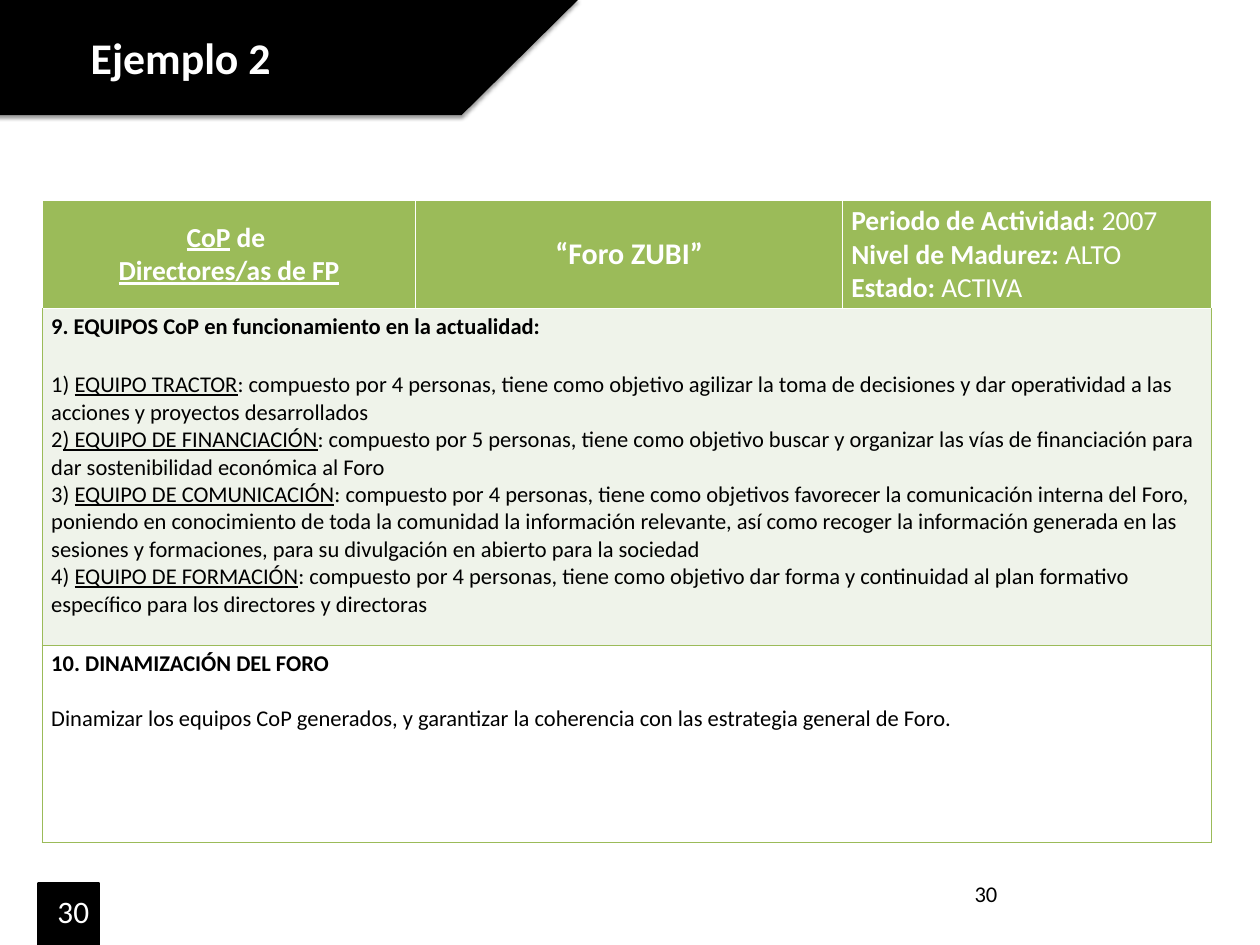
from lxml import etree
from pptx import Presentation
from pptx import util as u
from pptx.dml.color import RGBColor
from pptx.enum import shapes, text
from pptx.oxml.ns import qn

BLACK = RGBColor(0x00, 0x00, 0x00)
WHITE = RGBColor(0xFF, 0xFF, 0xFF)
GREEN = RGBColor(0x9B, 0xBB, 0x59)
PALE = RGBColor(0xEF, 0xF3, 0xEA)
FONT = "Calibri"
PLAIN, BOLD, UNDER = "", "b", "u"


class SlideBuilder:
    def __init__(self, slide):
        self.slide = slide

    def block(self, kind, left, top, width, height, line=None):
        block = self.slide.shapes.add_shape(
            kind, u.Pt(left), u.Pt(top), u.Pt(width), u.Pt(height))
        block.shadow.inherit = False
        block.fill.solid()
        block.fill.fore_color.rgb = BLACK
        if line:
            block.line.color.rgb = BLACK
            block.line.width = u.Pt(line)
        else:
            block.line.fill.background()
        return block

    def banner(self, left, top, width, height, slant):
        banner = self.block(shapes.MSO_SHAPE.PARALLELOGRAM, left, top, width, height)
        banner.adjustments[0] = slant
        effects = banner._element.spPr.find(qn("a:effectLst"))
        shadow = etree.SubElement(
            effects, qn("a:outerShdw"), blurRad=str(u.Pt(3.1)),
            dist=str(u.Pt(1.6)), dir="5400000", rotWithShape="0")
        colour = etree.SubElement(shadow, qn("a:srgbClr"), val=str(BLACK))
        etree.SubElement(colour, qn("a:alpha"), val="38000")

    def label(self, words, left, top, width, height, size, colour, bold=False):
        box = self.slide.shapes.add_textbox(
            u.Pt(left), u.Pt(top), u.Pt(width), u.Pt(height))
        box.text_frame.word_wrap = True
        self.fill_text(box.text_frame, [[(words, BOLD if bold else PLAIN)]], size, colour)

    def fill_text(self, frame, lines, size, colour, align=text.PP_ALIGN.LEFT, gap=0):
        for index, runs in enumerate(lines):
            paragraph = frame.paragraphs[0] if index == 0 else frame.add_paragraph()
            paragraph.alignment = align
            if index == 1 and gap:
                paragraph.space_before = u.Pt(gap)
            font = paragraph.font
            font.name, font.size = FONT, u.Pt(size)
            font.color.rgb = colour
            for words, style in runs:
                run = paragraph.add_run()
                run.text = words
                run.font.bold = BOLD in style
                run.font.underline = UNDER in style

    def table(self, left, top, widths, heights):
        table = self.slide.shapes.add_table(
            len(heights), len(widths), u.Pt(left), u.Pt(top),
            u.Pt(sum(widths)), u.Pt(sum(heights))).table
        table.first_row = table.horz_banding = False
        for column, width in zip(table.columns, widths):
            column.width = u.Pt(width)
        for row, height in zip(table.rows, heights):
            row.height = u.Pt(height)
        return table

    def cell(self, cell, fill, border, top_border=None):
        properties = cell._tc.get_or_add_tcPr()
        for side in ("lnL", "lnR", "lnT", "lnB"):
            colour = top_border if side == "lnT" and top_border else border
            edge = etree.SubElement(properties, qn("a:" + side), w=str(u.Pt(1)))
            solid = etree.SubElement(edge, qn("a:solidFill"))
            etree.SubElement(solid, qn("a:srgbClr"), val=str(colour))
        cell.fill.solid()
        cell.fill.fore_color.rgb = fill


def main():
    deck = Presentation()
    deck.slide_width, deck.slide_height = u.Pt(1008), u.Pt(756)
    builder = SlideBuilder(deck.slides.add_slide(deck.slide_layouts[6]))

    builder.block(shapes.MSO_SHAPE.RECTANGLE, 31, 706.3, 48.2, 49.7, line=2)
    builder.label("30", 772.6, 700.6, 235.4, 40.3, 18, BLACK)

    forum = builder.table(33.8, 160, (298.8, 341.3, 295.2), (87, 269.3, 157.7))

    centre, left = text.PP_ALIGN.CENTER, text.PP_ALIGN.LEFT
    middle, top = text.MSO_ANCHOR.MIDDLE, text.MSO_ANCHOR.TOP
    facts = [("Periodo de Actividad: ", "2007"),
             ("Nivel de Madurez: ", "ALTO"),
             ("Estado: ", "ACTIVA")]
    headings = [
        ([[("CoP", BOLD + UNDER), (" de ", BOLD)],
          [("Directores/as de FP", BOLD + UNDER)]], 22, centre, middle),
        ([[("“Foro ZUBI”", BOLD)]], 24, centre, middle),
        ([[(name, BOLD), (value, PLAIN)] for name, value in facts], 22, left, top),
    ]
    for column, (lines, size, align, anchor) in enumerate(headings):
        heading = forum.cell(0, column)
        builder.cell(heading, GREEN, WHITE)
        heading.vertical_anchor = anchor
        builder.fill_text(heading.text_frame, lines, size, WHITE, align)

    teams = [
        ("1) ", "EQUIPO TRACTOR",
         ": compuesto por 4 personas, tiene como objetivo agilizar la toma de decisiones "
         "y dar operatividad a las acciones y proyectos desarrollados"),
        ("2", ") EQUIPO DE FINANCIACIÓN",
         ": compuesto por 5 personas, tiene como objetivo buscar y organizar las vías de "
         "financiación para dar sostenibilidad económica al Foro"),
        ("3) ", "EQUIPO DE COMUNICACIÓN",
         ": compuesto por 4 personas, tiene como objetivos favorecer la comunicación "
         "interna del Foro, poniendo en conocimiento de toda la comunidad la información "
         "relevante, así como recoger la información generada en las sesiones y "
         "formaciones, para su divulgación en abierto para la sociedad"),
        ("4) ", "EQUIPO DE FORMACIÓN",
         ": compuesto por 4 personas, tiene como objetivo dar forma y continuidad al plan "
         "formativo específico para los directores y directoras"),
    ]
    team_lines = [list(zip(team, (PLAIN, UNDER, PLAIN))) for team in teams]
    sections = [
        ("9. EQUIPOS CoP en funcionamiento en la actualidad:", team_lines, PALE, WHITE, 24.4),
        ("10. DINAMIZACIÓN DEL FORO",
         [[("Dinamizar los equipos CoP generados, y garantizar la coherencia con las "
            "estrategia general de Foro.", PLAIN)]], WHITE, GREEN, 22),
    ]
    for row, (title, body, fill, top_border, gap) in enumerate(sections, 1):
        section = forum.cell(row, 0)
        section.merge(forum.cell(row, 2))
        for column in range(3):
            builder.cell(forum.cell(row, column), fill, GREEN, top_border)
        builder.fill_text(section.text_frame, [[(title, BOLD)]] + body, 18, BLACK, gap=gap)

    builder.banner(-129.6, -0.7, 592.6, 92.9, 1.01)
    builder.label("Ejemplo 2", 65.5, 20.9, 374.4, 49.7, 35, WHITE, bold=True)
    builder.label("30", 38.9, 710.6, 235.4, 40.3, 25, WHITE)

    deck.save("out.pptx")


if __name__ == "__main__":
    main()
